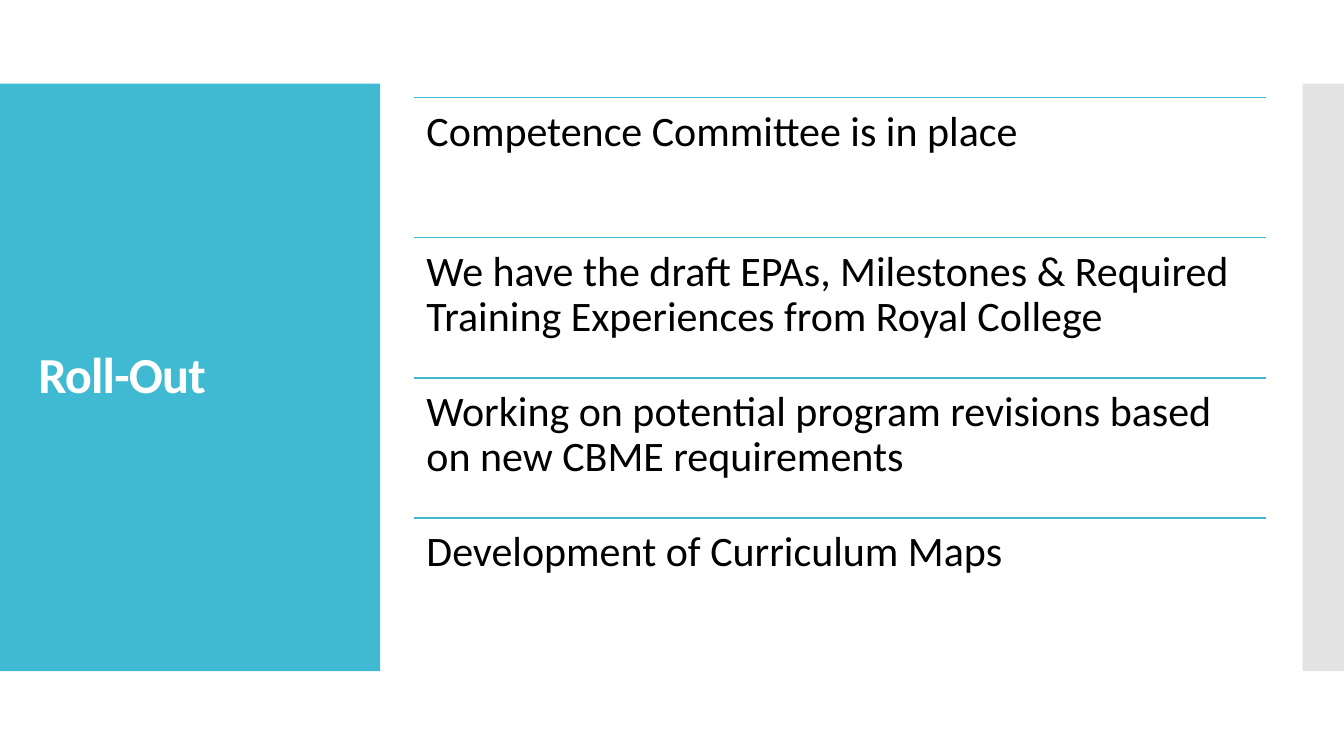
from pptx import Presentation
from pptx.dml.color import RGBColor
from pptx.enum.shapes import MSO_CONNECTOR as Connector, MSO_SHAPE as Shape
from pptx.enum.text import MSO_ANCHOR as Anchor, PP_ALIGN as Align
from pptx.oxml.ns import qn
from pptx.util import Inches, Pt
from lxml.etree import SubElement

TEAL = RGBColor(0x40, 0xBA, 0xD2)
GRAY = RGBColor(0xC8, 0xC8, 0xC8)
WHITE = RGBColor(0xFF, 0xFF, 0xFF)
BLACK = RGBColor(0, 0, 0)

BAND_TOP, BAND_HEIGHT = 0.83, 5.83
LIST_LEFT, LIST_TOP, LIST_WIDTH, ROW_HEIGHT = 4.11, 0.97, 8.45, 1.39
STEPS = [
    "Competence Committee is in place",
    "We have the draft EPAs, Milestones & Required Training Experiences from Royal College",
    "Working on potential program revisions based on new CBME requirements",
    "Development of Curriculum Maps",
]


def set_attributes(target, values):
    for name, value in values.items():
        setattr(target, name, value)


def write_text(box, text, size, color, bold=False):
    para = box.text_frame.paragraphs[0]
    set_attributes(para, {"alignment": Align.LEFT, "line_spacing": 0.9,
                          "space_before": Pt(0)})
    span = para.add_run()
    span.text = text
    set_attributes(span.font, {"name": "Calibri", "size": Pt(size), "bold": bold})
    span.font.color.rgb = color
    return span


def add_band(page, left, width, color, opacity=100):
    band = page.shapes.add_shape(Shape.RECTANGLE, Inches(left), Inches(BAND_TOP),
                                 Inches(width), Inches(BAND_HEIGHT))
    band.shadow.inherit = False
    band.fill.solid()
    band.fill.fore_color.rgb = color
    band.line.fill.background()
    if opacity < 100:
        tint = band.element.spPr.find(qn("a:solidFill"))[0]
        SubElement(tint, qn("a:alpha"), val=str(opacity * 1000))


def place_title(page, text):
    """Format the title and bring it in front of the bands."""
    title = page.shapes.title
    set_attributes(title, {"left": Inches(0.28), "top": Inches(1.23),
                           "width": Inches(3.22), "height": Inches(5.03)})
    set_attributes(title.text_frame, {"vertical_anchor": Anchor.MIDDLE, "word_wrap": True})
    span = write_text(title, text, 36, WHITE, bold=True)
    span.font._element.set("spc", "-60")
    title.element.getparent().append(title.element)


def add_rule(page, top):
    rule = page.shapes.add_connector(Connector.STRAIGHT, Inches(LIST_LEFT), Inches(top),
                                     Inches(LIST_LEFT + LIST_WIDTH), Inches(top))
    rule.line.color.rgb = TEAL
    rule.line.width = Pt(0.85)
    SubElement(rule.element.spPr, qn("a:effectLst"))


def add_step(page, top, text):
    box = page.shapes.add_textbox(Inches(LIST_LEFT), Inches(top),
                                  Inches(LIST_WIDTH), Inches(ROW_HEIGHT))
    inset = Inches(0.12)
    set_attributes(box.text_frame, {
        "word_wrap": True, "vertical_anchor": Anchor.TOP,
        "margin_left": inset, "margin_right": inset,
        "margin_top": inset, "margin_bottom": inset})
    write_text(box, text, 30, BLACK)


def main():
    deck = Presentation()
    set_attributes(deck, {"slide_width": Inches(13.33), "slide_height": Inches(7.5)})
    page = deck.slides.add_slide(deck.slide_layouts.get_by_name("Title Only"))
    add_band(page, 0, 3.77, TEAL)
    add_band(page, 12.92, 0.41, GRAY, opacity=50)
    place_title(page, "Roll-Out")
    for row, step in enumerate(STEPS):
        top = LIST_TOP + row * ROW_HEIGHT
        add_rule(page, top)
        add_step(page, top, step)
    deck.save("out.pptx")


if __name__ == "__main__":
    main()
